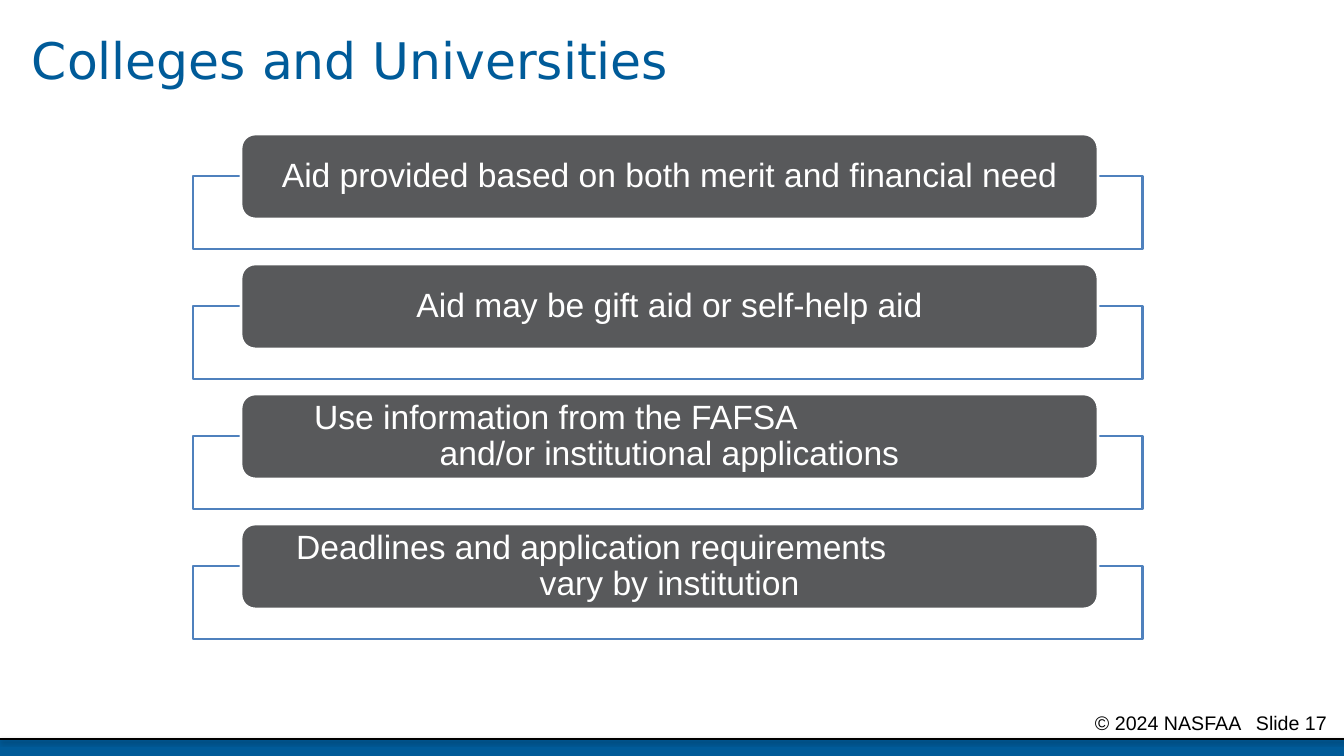
from dataclasses import dataclass

from lxml import etree
from pptx import Presentation
from pptx.dml.color import RGBColor
from pptx.enum.shapes import MSO_CONNECTOR, MSO_SHAPE
from pptx.enum.text import MSO_ANCHOR, PP_ALIGN
from pptx.oxml import parse_xml
from pptx.oxml.ns import nsdecls, qn
from pptx.util import Pt

RECT, ROUNDED = MSO_SHAPE.RECTANGLE, MSO_SHAPE.ROUNDED_RECTANGLE
STRAIGHT = MSO_CONNECTOR.STRAIGHT
MIDDLE, TOP = MSO_ANCHOR.MIDDLE, MSO_ANCHOR.TOP
LEFT, CENTER = PP_ALIGN.LEFT, PP_ALIGN.CENTER

BLUE = RGBColor(0x00, 0x5B, 0x99)
FRAME_BLUE = RGBColor(0x4F, 0x81, 0xBD)
GRAY = RGBColor(0x58, 0x59, 0x5B)
WHITE = RGBColor(0xFF, 0xFF, 0xFF)
BLACK = RGBColor(0x00, 0x00, 0x00)

TITLE_FONT = {"name": "DejaVu Sans", "size": Pt(36), "color": BLUE}
CARD_FONT = {"name": "Arial", "size": Pt(24), "color": WHITE}
FOOTER_FONT = {"name": "Arial", "size": Pt(14), "color": BLACK}

PAGE_W, PAGE_H = 1344, 756
FOOTER_LINE_Y = 739
CARD_PITCH = 130


def emu(px: int) -> int:
    return round(px * 914400 / 100.8)


@dataclass
class Area:
    left: int
    top: int
    width: int
    height: int

    def lengths(self) -> list[int]:
        return [emu(px) for px in (self.left, self.top, self.width, self.height)]

    def lowered(self, by: int) -> "Area":
        return Area(self.left, self.top + by, self.width, self.height)


@dataclass
class Line:
    text: str
    align: PP_ALIGN = CENTER
    indent: int = 0


FRAME = Area(193, 176, 950, 73)
CARD = Area(241, 134, 857, 85)
CARDS = [
    [Line("Aid provided based on both merit and financial need")],
    [Line("Aid may be gift aid or self-help aid")],
    [Line("Use information from the FAFSA", LEFT, 44),
     Line("and/or institutional applications")],
    [Line("Deadlines and application requirements", LEFT, 26),
     Line("vary by institution")],
]


def write(box, lines: list[Line], font: dict, anchor, side: int,
          edge: int, spacing: float = 0.9) -> None:
    frame = box.text_frame
    layout = {
        "word_wrap": True, "vertical_anchor": anchor,
        "margin_left": emu(side), "margin_right": emu(side),
        "margin_top": emu(edge), "margin_bottom": emu(edge),
    }
    for name, value in layout.items():
        setattr(frame, name, value)
    for number, line in enumerate(lines):
        para = frame.paragraphs[0] if number == 0 else frame.add_paragraph()
        para.alignment, para.line_spacing = line.align, spacing
        if line.indent:
            para._p.get_or_add_pPr().set("marL", str(emu(line.indent)))
        span = para.add_run()
        span.text = line.text
        for name in ("name", "size"):
            setattr(span.font, name, font[name])
        span.font.color.rgb = font["color"]


def add_block(page, kind, area: Area, fill: RGBColor, outline: RGBColor | None = None):
    box = page.shapes.add_shape(kind, *area.lengths())
    box.shadow.inherit = False
    box.fill.solid()
    box.fill.fore_color.rgb = fill
    if outline is None:
        box.line.fill.background()
    else:
        box.line.color.rgb = outline
        box.line.width = Pt(2)
    return box


def add_footer(page) -> None:
    add_block(page, RECT, Area(0, FOOTER_LINE_Y, PAGE_W, PAGE_H - FOOTER_LINE_Y), BLUE)
    rule = page.shapes.add_connector(
        STRAIGHT, 0, emu(FOOTER_LINE_Y), emu(PAGE_W), emu(FOOTER_LINE_Y))
    rule.line.color.rgb = BLACK
    rule.line.width = Pt(2)
    rule._element.spPr.append(parse_xml(
        f'<a:effectLst {nsdecls("a")}>'
        '<a:outerShdw blurRad="39370" dist="20320" dir="5400000" rotWithShape="0">'
        '<a:srgbClr val="000000"><a:alpha val="38000"/></a:srgbClr>'
        '</a:outerShdw></a:effectLst>'))

    note = page.shapes.add_textbox(*Area(1085, 706, 259, 25).lengths())
    # The tab stop separates the copyright from the slide number
    props = note.text_frame.paragraphs[0]._p.get_or_add_pPr()
    tabs = etree.SubElement(props, qn("a:tabLst"))
    etree.SubElement(tabs, qn("a:tab"), pos=str(emu(161)), algn="l")
    write(note, [Line("© 2024 NASFAA\tSlide 17", LEFT)], FOOTER_FONT, TOP, 10, 5, 1.0)


def add_card(page, lines: list[Line], offset: int) -> None:
    add_block(page, RECT, FRAME.lowered(offset), WHITE, FRAME_BLUE)
    card = add_block(page, ROUNDED, CARD.lowered(offset), GRAY, WHITE)
    write(card, lines, CARD_FONT, MIDDLE, 25, 0)


def main() -> None:
    deck = Presentation()
    deck.slide_width, deck.slide_height = emu(PAGE_W), emu(PAGE_H)
    page = deck.slides.add_slide(deck.slide_layouts[6])

    # Footer band, rule and copyright
    add_footer(page)

    # Title
    title = page.shapes.add_textbox(*Area(22, 0, 1299, 126).lengths())
    write(title, [Line("Colleges and Universities", LEFT)], TITLE_FONT, MIDDLE, 10, 5)

    # Framed statements
    for number, lines in enumerate(CARDS):
        add_card(page, lines, number * CARD_PITCH)

    deck.save("out.pptx")


if __name__ == "__main__":
    main()
